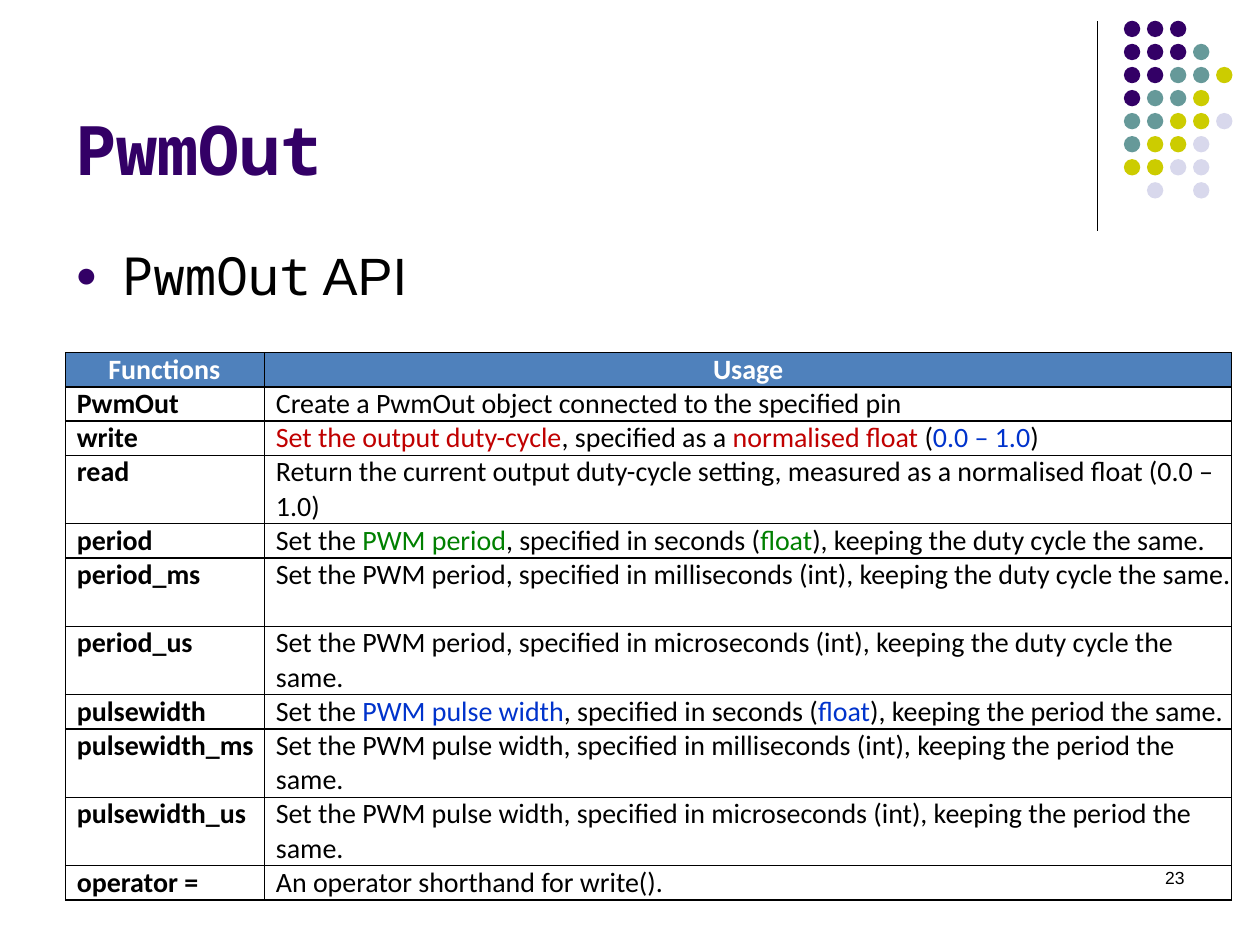
import pptx
import pptx.util
import pptx.dml.color
import pptx.enum.shapes
import pptx.enum.text
import pptx.oxml

WIDE, HIGH = pptx.util.Inches(10), pptx.util.Inches(7.5)
MONO, SANS, BODY = "Noto Sans Mono", "Arial", "Calibri"
INK, PLUM, WHITE = "000000", "330066", "FFFFFF"
RED, BLUE, GREEN = "C00000", "0033CC", "008000"
HUES = {"P": PLUM, "T": "669999", "Y": "CCCC00", "L": "D8D8EC"}
DOTS = ["PPP", "PPPT", "PPTTY", "PTTY", "TTYYL", "TYYL", "YYLL", " L L"]
ALIGN = pptx.enum.text.PP_ALIGN
NS = 'xmlns:a="http://schemas.openxmlformats.org/drawingml/2006/main"'


def across(share):
    return round(WIDE * share / 100)


def down(share):
    return round(HIGH * share / 100)


def paint(hue):
    return pptx.dml.color.RGBColor.from_string(hue)


def node(xml):
    return pptx.oxml.parse_xml(xml.replace(" ", f" {NS} ", 1))


def write(para, parts, size, bold=False):
    para.text = parts[0][0]
    for part in parts[1:]:
        para.add_run().text = part[0]
    for run, (_, face, hue) in zip(para.runs, parts):
        font = run.font
        font.name, font.size, font.bold = face, pptx.util.Pt(size), bold
        font.color.rgb = paint(hue)


def label(slide, x, y, w, h, parts, size, bold=False):
    box = slide.shapes.add_textbox(across(x), down(y), across(w), down(h))
    frame = box.text_frame
    frame.word_wrap = True
    write(frame.paragraphs[0], parts, size, bold)
    return frame


def indent(para, left, first=0):
    props = para._p.get_or_add_pPr()
    props.set("marL", str(pptx.util.Inches(left)))
    props.set("indent", str(pptx.util.Inches(first)))
    return props


def bullet(para, hue):
    props = indent(para, 0.37, -0.37)
    for xml in (f'<a:buClr ><a:srgbClr val="{hue}"/></a:buClr>',
                '<a:buSzPct val="70000"/>',
                '<a:buFont typeface="Arial"/>',
                '<a:buChar char="●"/>'):
        props.append(node(xml))


def rule(slide, x, top, end):
    kind = pptx.enum.shapes.MSO_CONNECTOR.STRAIGHT
    line = slide.shapes.add_connector(kind, across(x), down(top), across(x), down(end))
    line.line.color.rgb = paint(INK)
    line.line.width = pptx.util.Pt(0.75)
    line._element.spPr.append(node("<a:effectLst />"))


def dots(slide, x, y, step, size):
    group = slide.shapes.add_group_shape()
    for row, marks in enumerate(DOTS):
        for col, mark in enumerate(marks):
            if mark == " ":
                continue
            dot = group.shapes.add_shape(
                pptx.enum.shapes.MSO_SHAPE.OVAL,
                across(x + col * step), down(y) + across(row * step),
                across(size), across(size))
            dot.shadow.inherit = False
            dot.fill.solid()
            dot.fill.fore_color.rgb = paint(HUES[mark])
            dot.line.fill.background()


def edge(cell):
    props = cell._tc.get_or_add_tcPr()
    for spot, side in enumerate("LRTB"):
        props.insert(spot, node(
            f'<a:ln{side} w="12700"><a:solidFill><a:srgbClr val="{INK}"/>'
            f'</a:solidFill></a:ln{side}>'))


def plain(text, hue=INK):
    return text, BODY, hue


def timing(what, unit, kind, keep, hue=INK):
    return [plain("Set the "), plain(f"PWM {what}", hue),
            plain(f", specified in {unit} ("), plain(kind, hue),
            plain(f"), keeping the {keep} the same.")]


def usage():
    rows = [
        ("PwmOut", 1, [plain("Create a PwmOut object connected to the specified pin")]),
        ("write", 1, [plain("Set the output duty-cycle", RED), plain(", specified as a "),
                      plain("normalised float ", RED), plain("("),
                      plain("0.0 – 1.0", BLUE), plain(")")]),
        ("read", 2, [plain("Return the current output duty-cycle setting, "
                           "measured as a normalised float (0.0 – 1.0)")]),
    ]
    for name, what, keep, hue in (("period", "period", "duty cycle", GREEN),
                                  ("pulsewidth", "pulse width", "period", BLUE)):
        rows += [(name, 1, timing(what, "seconds", "float", keep, hue)),
                 (name + "_ms", 2, timing(what, "milliseconds", "int", keep)),
                 (name + "_us", 2, timing(what, "microseconds", "int", keep))]
    return rows + [("operator =", 1, [plain("An operator shorthand for write().")])]


def put(cell, parts, bold, left, tint=None):
    cell.margin_left = cell.margin_right = cell.margin_top = cell.margin_bottom = 0
    para = cell.text_frame.paragraphs[0]
    write(para, parts, 16, bold)
    indent(para, left)
    if tint:
        cell.fill.solid()
        cell.fill.fore_color.rgb = paint(tint)
    else:
        cell.fill.background()
    edge(cell)
    return para


def table(slide, x, y, widths, tall):
    rows = usage()
    lines = [1] + [row[1] for row in rows]
    grid = slide.shapes.add_table(len(lines), 2, across(x), down(y),
                                  across(sum(widths)), down(tall * sum(lines))).table
    grid.first_row = grid.horz_banding = False
    for col, width in zip(grid.columns, widths):
        col.width = across(width)
    for row, count in zip(grid.rows, lines):
        row.height = down(tall * count)
    put(grid.cell(0, 0), [plain("Functions", WHITE)], True, 0.34, "4F81BC")
    head = put(grid.cell(0, 1), [plain("Usage", WHITE)], True, 0, "4F81BC")
    head.alignment = ALIGN.CENTER
    for num, (name, _, parts) in enumerate(rows, 1):
        put(grid.cell(num, 0), [plain(name)], True, 0.09)
        put(grid.cell(num, 1), parts, False, 0.09)


def main():
    deck = pptx.Presentation()
    deck.slide_width, deck.slide_height = WIDE, HIGH
    slide = deck.slides.add_slide(deck.slide_layouts[6])
    rule(slide, 87.1, 2.27, 24.4)
    dots(slide, 89.2, 2.2, 1.83, 1.3)
    title = label(slide, 5, 1.73, 82.5, 18.93, [("PwmOut", MONO, PLUM)], 39, True)
    title.vertical_anchor = pptx.enum.text.MSO_ANCHOR.BOTTOM
    body = label(slide, 5, 25.07, 90, 64.27,
                 [("PwmOut", MONO, INK), (" API", SANS, INK)], 30)
    bullet(body.paragraphs[0], PLUM)
    page = label(slide, 71.7, 91.07, 23.3, 6.67, [("23", SANS, INK)], 10)
    page.paragraphs[0].alignment = ALIGN.RIGHT
    table(slide, 5.2, 37.33, (15.8, 76.75), 3.62)
    deck.save("out.pptx")


if __name__ == "__main__":
    main()
